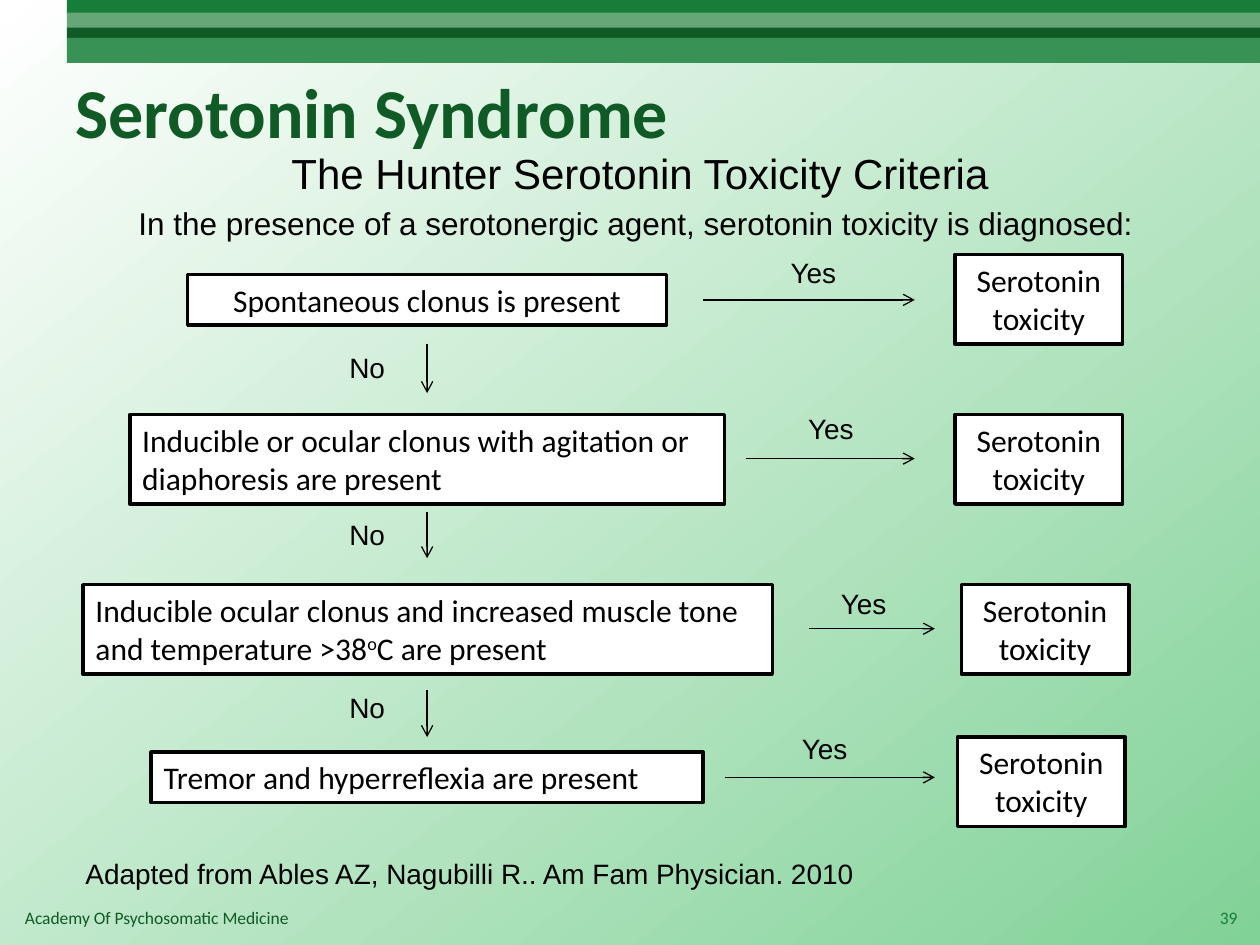
from dataclasses import dataclass

from lxml.etree import SubElement
from pptx import Presentation
from pptx.dml.color import RGBColor
from pptx.enum.shapes import MSO_CONNECTOR, MSO_SHAPE
from pptx.enum.text import MSO_ANCHOR, MSO_AUTO_SIZE, PP_ALIGN
from pptx.oxml.ns import qn
from pptx.util import Inches, Pt

BLACK = RGBColor(0x00, 0x00, 0x00)
WHITE = RGBColor(0xFF, 0xFF, 0xFF)
PALE_GREEN = RGBColor(0x81, 0xD2, 0x97)
DARK_GREEN = RGBColor(0x10, 0x5A, 0x25)
GREEN = RGBColor(0x17, 0x7D, 0x38)
SOFT_GREEN = RGBColor(0x66, 0xA6, 0x77)
MID_GREEN = RGBColor(0x38, 0x91, 0x55)

LEFT, CENTER, RIGHT = PP_ALIGN.LEFT, PP_ALIGN.CENTER, PP_ALIGN.RIGHT
NO_ARROW_X = 3.39
RESULT_W, RESULT_H = 1.33, 0.71


@dataclass(frozen=True)
class Run:
    text: str
    superscript: bool = False


@dataclass(frozen=True)
class Style:
    size: float
    font: str = "Arial"
    color: RGBColor = BLACK
    bold: bool = False
    align: PP_ALIGN = LEFT
    anchor: MSO_ANCHOR = MSO_ANCHOR.TOP


@dataclass(frozen=True)
class Band:
    top: float
    height: float
    color: RGBColor


@dataclass(frozen=True)
class Label:
    text: str
    box: tuple[float, float, float, float]
    style: Style


@dataclass(frozen=True)
class Criterion:
    """One test of the flowchart with its Yes arrow and result."""
    runs: tuple[Run, ...]
    box: tuple[float, float, float, float]
    align: PP_ALIGN
    yes_at: tuple[float, float]
    arrow: tuple[float, float, float]  # start x, end x, y
    result_at: tuple[float, float]


@dataclass(frozen=True)
class NoStep:
    label_top: float
    arrow_top: float
    arrow_bottom: float


BANDS = (
    Band(0, 0.11, GREEN),
    Band(0.1, 0.13, SOFT_GREEN),
    Band(0.22, 0.09, DARK_GREEN),
    Band(0.3, 0.2, MID_GREEN),
)

BRANCH = Style(16, align=CENTER)
LABELS = (
    Label("Academy Of Psychosomatic Medicine", (0.1, 7.15, 6.94, 0.27),
          Style(10, "Calibri", DARK_GREEN)),
    Label("Serotonin Syndrome", (0.5, 0.42, 9, 0.92),
          Style(40, "Calibri", DARK_GREEN, bold=True, anchor=MSO_ANCHOR.MIDDLE)),
    Label("39", (9.52, 7.08, 0.4, 0.4),
          Style(10, "Calibri", GREEN, align=RIGHT, anchor=MSO_ANCHOR.MIDDLE)),
    Label("The Hunter Serotonin Toxicity Criteria", (2.08, 1.12, 6, 0.5),
          Style(24, align=CENTER)),
    Label("In the presence of a serotonergic agent, serotonin toxicity is diagnosed:",
          (1, 1.57, 8.17, 0.4), Style(18)),
    Label("Adapted from Ables AZ, Nagubilli R.. Am Fam Physician. 2010",
          (0.58, 6.75, 7.25, 0.37), Style(16)),
)

CRITERIA = (
    Criterion((Run("Spontaneous clonus is present"),),
              (1.49, 2.18, 3.8, 0.4), CENTER,
              (6.08, 1.98), (5.58, 7.26, 2.38), (7.58, 2.02)),
    Criterion((Run("Inducible or ocular clonus with agitation or diaphoresis are present"),),
              (1.03, 3.29, 4.72, 0.71), LEFT,
              (6.22, 3.22), (5.92, 7.26, 3.64), (7.58, 3.29)),
    Criterion((Run("Inducible ocular clonus and increased muscle tone and temperature >38"),
               Run("o", superscript=True), Run("C are present")),
              (0.66, 4.64, 5.47, 0.71), LEFT,
              (6.48, 4.61), (6.42, 7.42, 4.99), (7.63, 4.64)),
    Criterion((Run("Tremor and hyperreflexia are present"),),
              (1.2, 5.97, 4.38, 0.4), LEFT,
              (6.17, 5.76), (5.75, 7.42, 6.17), (7.6, 5.85)),
)

NO_STEPS = (
    NoStep(2.73, 2.73, 3.12),
    NoStep(4.06, 4.06, 4.43),
    NoStep(5.43, 5.48, 5.85),
)


def write(sp, runs: tuple[Run, ...], style: Style) -> None:
    tf = sp.text_frame
    tf.word_wrap = True
    tf.auto_size = MSO_AUTO_SIZE.NONE
    tf.vertical_anchor = style.anchor
    p = tf.paragraphs[0]
    p.alignment = style.align
    for run in runs:
        r = p.add_run()
        r.text = run.text
        r.font.name = style.font
        r.font.size = Pt(style.size)
        r.font.bold = style.bold
        r.font.color.rgb = style.color
        if run.superscript:
            r._r.get_or_add_rPr().set("baseline", "30000")


def add_label(s, label: Label) -> None:
    sp = s.shapes.add_textbox(*map(Inches, label.box))
    write(sp, (Run(label.text),), label.style)


def add_rect(s, box: tuple[float, float, float, float], fill: RGBColor):
    sp = s.shapes.add_shape(MSO_SHAPE.RECTANGLE, *map(Inches, box))
    sp.shadow.inherit = False
    sp.fill.solid()
    sp.fill.fore_color.rgb = fill
    sp.line.fill.background()
    return sp


def add_box(s, box: tuple[float, float, float, float],
            runs: tuple[Run, ...], align: PP_ALIGN) -> None:
    sp = add_rect(s, box, WHITE)
    sp.line.color.rgb = BLACK
    sp.line.width = Pt(2)
    write(sp, runs, Style(18, "Calibri", align=align))


def add_arrow(s, x1: float, y1: float, x2: float, y2: float) -> None:
    cx = s.shapes.add_connector(MSO_CONNECTOR.STRAIGHT, *map(Inches, (x1, y1, x2, y2)))
    cx.line.color.rgb = BLACK
    cx.line.width = Pt(0.75)
    SubElement(cx.line._get_or_add_ln(), qn("a:tailEnd"), type="arrow")
    SubElement(cx._element.spPr, qn("a:effectLst"))


def set_background(s) -> None:
    fill = s.background.fill
    fill.gradient()
    fill.gradient_angle = 360 - 52
    for stop, position, color in zip(fill.gradient_stops, (0, 1), (WHITE, PALE_GREEN)):
        stop.position = position
        stop.color.rgb = color


def main() -> None:
    prs = Presentation()
    prs.slide_width, prs.slide_height = Inches(10), Inches(7.5)
    s = prs.slides.add_slide(prs.slide_layouts[6])
    set_background(s)
    for band in BANDS:
        add_rect(s, (0.53, band.top, 9.49, band.height), band.color)
    for label in LABELS:
        add_label(s, label)
    for c in CRITERIA:
        add_box(s, c.box, c.runs, c.align)
        add_box(s, (*c.result_at, RESULT_W, RESULT_H), (Run("Serotonin toxicity"),), CENTER)
        add_label(s, Label("Yes", (*c.yes_at, 0.75, 0.37), BRANCH))
        start, end, y = c.arrow
        add_arrow(s, start, y, end, y)
    for step in NO_STEPS:
        add_label(s, Label("No", (2.5, step.label_top, 0.83, 0.37), BRANCH))
        add_arrow(s, NO_ARROW_X, step.arrow_top, NO_ARROW_X, step.arrow_bottom)
    prs.save("out.pptx")


if __name__ == "__main__":
    main()
